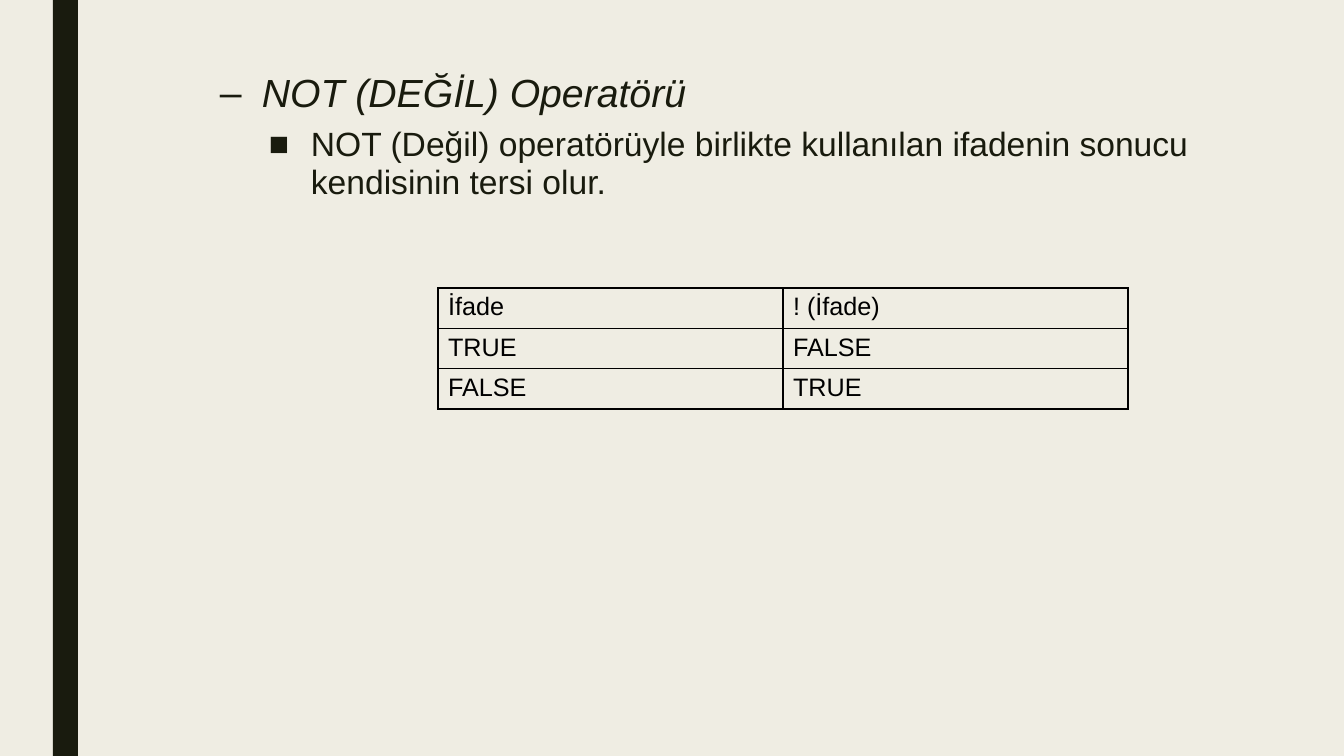
import pptx
import pptx.util
import pptx.dml.color
import pptx.enum.shapes
import pptx.oxml
import pptx.oxml.ns
import lxml.etree

PX = 914400 / 100.8
COLORS = {"paper": "EFEDE3", "ink": "191B0E", "grid": "000000"}
FONT = "Arial"


def px(length):
    return pptx.util.Emu(round(length * PX))


def add_run(paragraph, text, size, color, italic=False):
    run = paragraph.add_run()
    run.text = text
    run.font.name = FONT
    run.font.size = pptx.util.Pt(size)
    run.font.italic = italic
    run.font.color.rgb = pptx.dml.color.RGBColor.from_string(COLORS[color])


prs = pptx.Presentation()
prs.slide_width, prs.slide_height = px(1344), px(756)
slide = prs.slides.add_slide(prs.slide_layouts[6])
background = slide.background.fill
background.solid()
background.fore_color.rgb = pptx.dml.color.RGBColor.from_string(COLORS["paper"])

# Vertical band on the left
band = slide.shapes.add_shape(
    pptx.enum.shapes.MSO_SHAPE.RECTANGLE, px(53), 0, px(25), px(756))
band.shadow.inherit = False
band.fill.solid()
band.fill.fore_color.rgb = pptx.dml.color.RGBColor.from_string(COLORS["ink"])
band.line.fill.background()

# Operator name and its explanation
explanation = slide.shapes.add_textbox(px(151), px(14), px(1059), px(633)).text_frame
explanation.word_wrap = True
explanation.margin_top = px(58)
points = [
    (1, "–", "NOT (DEĞİL) Operatörü", 28, True),
    (2, "■", "NOT (Değil) operatörüyle birlikte kullanılan ifadenin sonucu "
             "kendisinin tersi olur.", 24, False),
]
for level, bullet, text, size, italic in points:
    point = explanation.paragraphs[0] if level == 1 else explanation.add_paragraph()
    point.level = level
    point.line_spacing = 0.94
    point.space_before = pptx.util.Pt(5)
    point.space_after = pptx.util.Pt(2)
    add_run(point, text, size, "ink", italic)
    properties = point._p.get_or_add_pPr()
    properties.set("marL", str(px(50 + 50 * level + (1 if level == 1 else 0))))
    properties.set("indent", str(px(-42)))
    for tag, key, value in (("a:buFont", "typeface", FONT), ("a:buChar", "char", bullet)):
        mark = lxml.etree.SubElement(properties, pptx.oxml.ns.qn(tag))
        mark.set(key, value)

# Truth table
truth_rows = [("İfade", "! (İfade)"), ("TRUE", "FALSE"), ("FALSE", "TRUE")]
truth_table = slide.shapes.add_table(
    3, 2, px(438), px(288), px(690), px(120)).table
for column in truth_table.columns:
    column.width = px(345)
for row, values in zip(truth_table.rows, truth_rows):
    row.height = px(40)
    for cell, value in zip(row.cells, values):
        add_run(cell.text_frame.paragraphs[0], value, 18, "grid")
        cell.fill.background()
        cell_properties = cell._tc.get_or_add_tcPr()
        for position, side in enumerate(("lnL", "lnR", "lnT", "lnB")):
            border = pptx.oxml.parse_xml(
                f'<a:{side} {pptx.oxml.ns.nsdecls("a")} w="12700"><a:solidFill>'
                f'<a:srgbClr val="{COLORS["grid"]}"/></a:solidFill></a:{side}>')
            cell_properties.insert(position, border)

prs.save("out.pptx")
